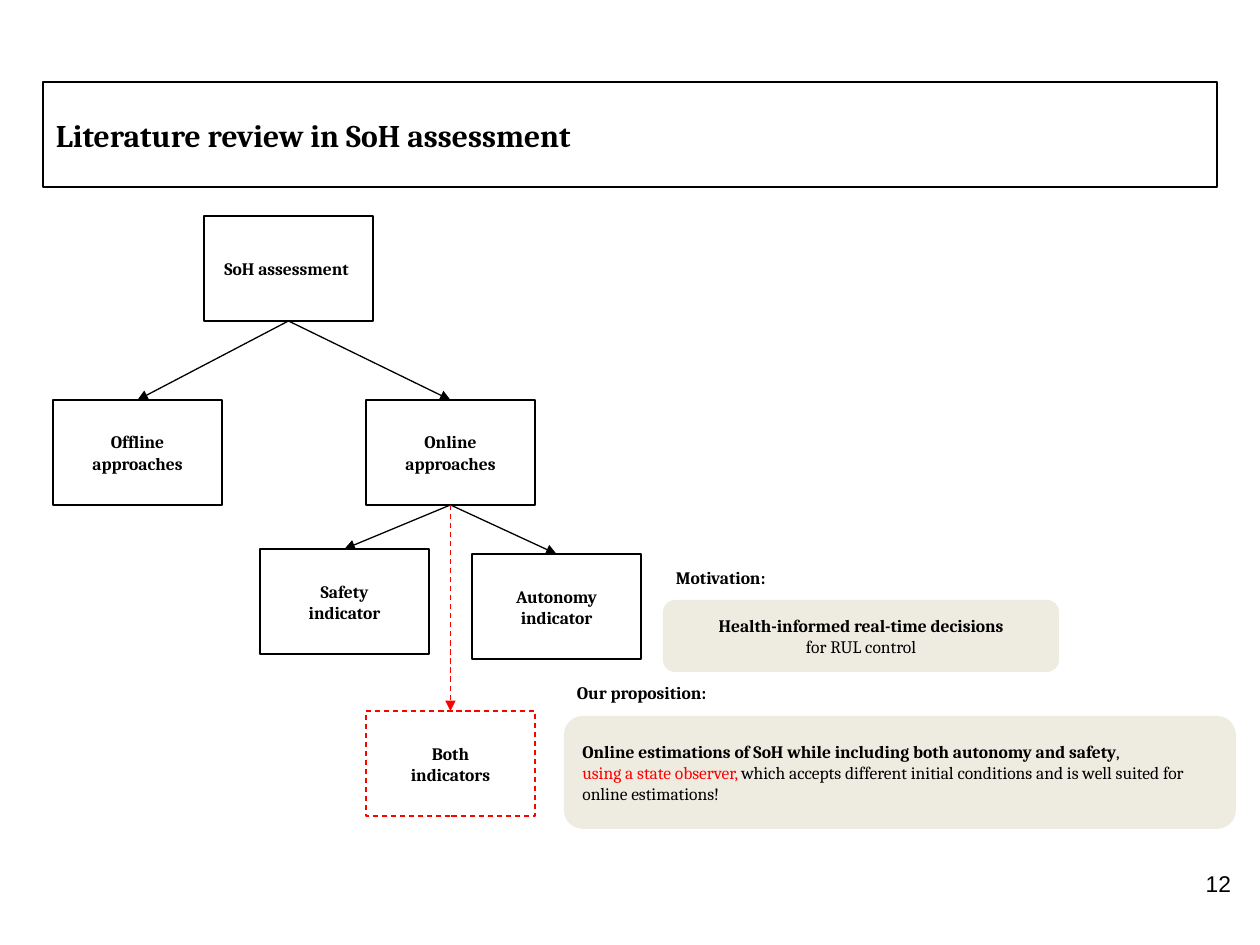
from pptx import Presentation
from pptx.dml.color import RGBColor
from pptx.enum.dml import MSO_LINE
from pptx.enum.shapes import MSO_CONNECTOR, MSO_SHAPE
from pptx.enum.text import MSO_ANCHOR, PP_ALIGN
from pptx.oxml.ns import qn
from pptx.util import Pt
from lxml.etree import SubElement

PX = 914400 // 126
THEME = {
    "ink": "000000", "red": "FF0000", "paper": "FFFFFF", "sand": "EEECE1",
    "serif": "Cambria", "sans": "Arial",
    "head": 18, "body": 10, "page": 13, "line": 0.75,
}
LEFT, MID, RIGHT = PP_ALIGN.LEFT, PP_ALIGN.CENTER, PP_ALIGN.RIGHT

# Content: a text is a list of lines, a line is a list of (words, bold, colour)
TITLE = [[("Literature review in SoH assessment", True, "ink")]]
NODE_W, NODE_H = 169, 105
NODES = {  # name: (left, top, lines, line colour)
    "root": (204, 216, ["SoH assessment "], "ink"),
    "offline": (53, 400, ["Offline approaches"], "ink"),
    "online": (366, 400, ["Online approaches"], "ink"),
    "safety": (260, 549, ["Safety", "indicator"], "ink"),
    "autonomy": (472, 554, ["Autonomy", "indicator"], "ink"),
    "both": (366, 711, ["Both", "indicators"], "red"),
}
LINKS = [
    ("root", "offline"), ("root", "online"), ("online", "safety"),
    ("online", "autonomy"), ("online", "both"),
]
NOTES = [  # label, label place, panel place, alignment, lines
    ("Our proposition:", (564, 668, 228, 49), (564, 716, 672, 113), LEFT, [
        [("Online estimations of SoH while including both autonomy and safety",
          True, "ink"), (",", False, "ink")],
        [("using a state observer, ", False, "red"),
         ("which accepts different initial conditions and is well suited for "
          "online estimations!", False, "ink")],
    ]),
    ("Motivation:", (663, 553, 228, 49), (663, 600, 396, 72), MID, [
        [("Health-informed real-time decisions", True, "ink")],
        [("for RUL control", False, "ink")],
    ]),
]
PAGE = [[("12", False, "ink")]]


def tint(name):
    return RGBColor.from_string(THEME[name])


def scale(*sizes):
    return [size * PX for size in sizes]


def write(shape, lines, align=LEFT, size="body", font="serif",
          anchor=MSO_ANCHOR.MIDDLE):
    frame = shape.text_frame
    pad = 13 * PX
    form = {"word_wrap": True, "vertical_anchor": anchor, "margin_left": pad,
            "margin_right": pad, "margin_top": pad, "margin_bottom": pad}
    for key, value in form.items():
        setattr(frame, key, value)
    for i, line in enumerate(lines):
        para = frame.add_paragraph() if i else frame.paragraphs[0]
        para.alignment = align
        for words, bold, color in line:
            run = para.add_run()
            run.text = words
            look = {"name": THEME[font], "size": Pt(THEME[size]), "bold": bold}
            for key, value in look.items():
                setattr(run.font, key, value)
            run.font.color.rgb = tint(color)


def stroke(line, color):
    line.color.rgb = tint(color)
    line.width = Pt(THEME["line"])
    if color == "red":
        line.dash_style = MSO_LINE.DASH


def panel(place, fill, edge=None, kind=MSO_SHAPE.RECTANGLE):
    shape = slide.shapes.add_shape(kind, *scale(*place))
    shape.shadow.inherit = False
    shape.fill.solid()
    shape.fill.fore_color.rgb = tint(fill)
    if edge:
        stroke(shape.line, edge)
    else:
        shape.line.fill.background()
    return shape


def label(place, lines, **form):
    write(slide.shapes.add_textbox(*scale(*place)), lines, **form)


def arrow(start, end, color):
    link = slide.shapes.add_connector(MSO_CONNECTOR.STRAIGHT, 0, 0, 0, 0)
    link.begin_connect(start, 2)
    link.end_connect(end, 0)
    stroke(link.line, color)
    props = link.element.spPr
    SubElement(props.find(qn("a:ln")), qn("a:tailEnd"), type="triangle")
    SubElement(props, qn("a:effectLst"))


deck = Presentation()
deck.slide_width, deck.slide_height = scale(1260, 945)
slide = deck.slides.add_slide(deck.slide_layouts[6])

# Title
write(panel((43, 82, 1174, 105), "paper", "ink"), TITLE, size="head")

# Tree of approaches
boxes = {}
for name, (left, top, lines, edge) in NODES.items():
    boxes[name] = panel((left, top, NODE_W, NODE_H), "paper", edge)
    write(boxes[name], [[(line, True, "ink")] for line in lines], MID)
for start, end in LINKS:
    arrow(boxes[start], boxes[end], NODES[end][3])

# Notes with their labels
for head, spot, place, align, lines in NOTES:
    write(panel(place, "sand", kind=MSO_SHAPE.ROUNDED_RECTANGLE), lines, align)
    label(spot, [[(head, True, "ink")]])

# Page number
label((1168, 857, 76, 72), PAGE, align=RIGHT, size="page", font="sans",
      anchor=MSO_ANCHOR.TOP)

deck.save("out.pptx")
